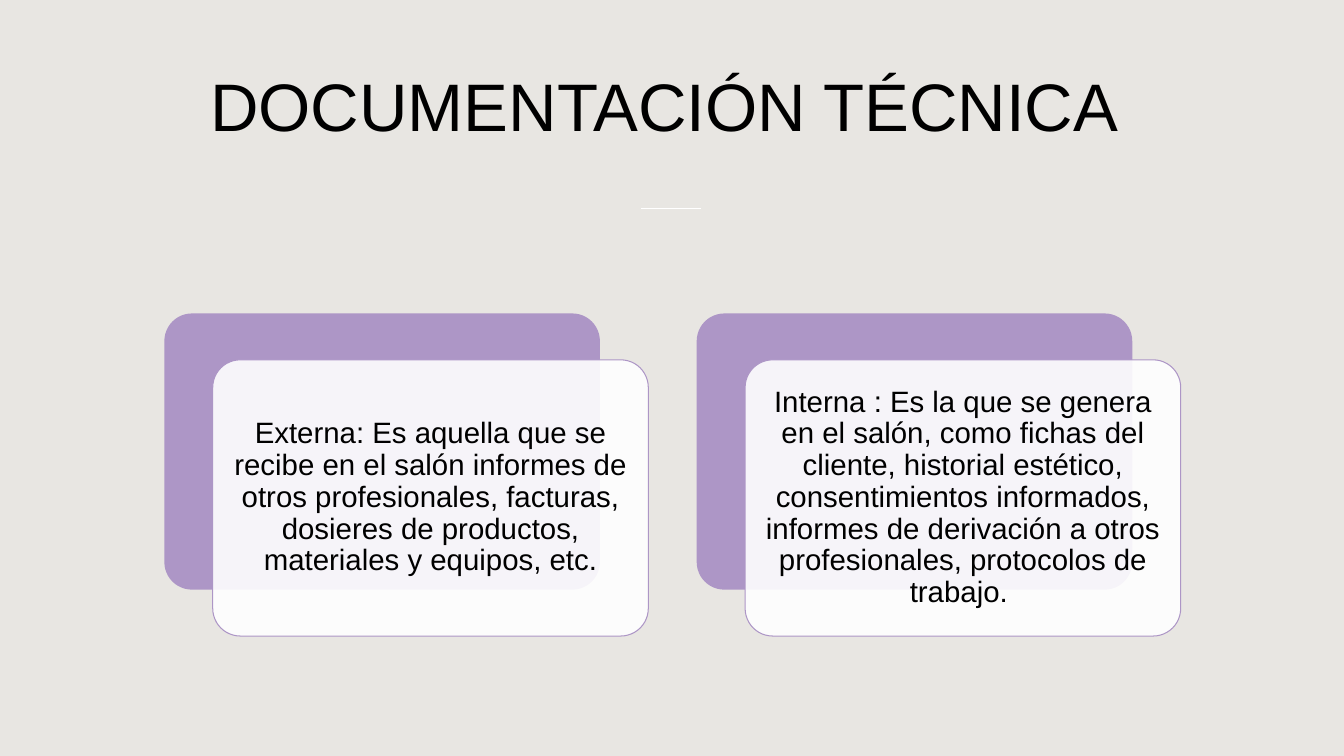
from pptx import Presentation
from pptx.dml.color import RGBColor
from pptx.enum.shapes import MSO_CONNECTOR as Connector, MSO_SHAPE as Shape
from pptx.enum.text import MSO_ANCHOR as Anchor, MSO_AUTO_SIZE as AutoSize, PP_ALIGN as Align
from pptx.oxml.ns import qn
from pptx.util import Inches, Pt
from lxml.etree import SubElement

BACKGROUND = RGBColor(0xE8, 0xE6, 0xE2)
PURPLE = RGBColor(0xAD, 0x96, 0xC6)
WHITE = RGBColor(0xFF, 0xFF, 0xFF)
BLACK = RGBColor(0, 0, 0)

CARD_WIDTH, CARD_HEIGHT = 4.32, 2.74
CARD_LEFT, CARD_TOP, CARD_STEP = 1.63, 3.11, 5.28
FRONT_SHIFT_X, FRONT_SHIFT_Y = 0.48, 0.46

DOCUMENT_TYPES = [
    "Externa: Es aquella que se recibe en el salón informes de otros profesionales, "
    "facturas, dosieres de productos, materiales y equipos, etc.",
    "Interna : Es la que se genera en el salón, como fichas del cliente, historial "
    "estético, consentimientos informados, informes de derivación a otros "
    "profesionales, protocolos de trabajo. ",
]


def write_text(shape, text, size):
    frame = shape.text_frame
    frame.word_wrap = True
    frame.auto_size = AutoSize.NONE
    frame.vertical_anchor = Anchor.MIDDLE
    paragraph = frame.paragraphs[0]
    paragraph.text = text
    paragraph.alignment = Align.CENTER
    paragraph.font.name = "Arial"
    paragraph.font.size = Pt(size)
    paragraph.font.color.rgb = BLACK
    return paragraph


def add_title(slide, text):
    title = slide.shapes.title
    title.left, title.top = Inches(1.08), Inches(0.28)
    title.width, title.height = Inches(11.17), Inches(1.52)
    write_text(title, text, 48)


def add_divider(slide):
    divider = slide.shapes.add_connector(
        Connector.STRAIGHT, Inches(6.36), Inches(2.07), Inches(6.95), Inches(2.07))
    divider.line.color.rgb = WHITE
    divider.line.width = Pt(1)
    SubElement(divider.line._get_or_add_ln().getparent(), qn("a:effectLst"))


def add_panel(slide, left, top, color):
    panel = slide.shapes.add_shape(
        Shape.ROUNDED_RECTANGLE, Inches(left), Inches(top),
        Inches(CARD_WIDTH), Inches(CARD_HEIGHT))
    panel.adjustments[0] = 0.1
    panel.shadow.inherit = False
    panel.fill.solid()
    panel.fill.fore_color.rgb = color
    return panel


def set_opacity(shape, percent):
    color = shape.fill._xPr.find(qn("a:solidFill"))[0]
    SubElement(color, qn("a:alpha"), val=str(percent * 1000))


def add_card(slide, left, text):
    back = add_panel(slide, left, CARD_TOP, PURPLE)
    back.line.fill.background()
    front = add_panel(slide, left + FRONT_SHIFT_X, CARD_TOP + FRONT_SHIFT_Y, WHITE)
    set_opacity(front, 90)
    front.line.color.rgb = PURPLE
    front.line.width = Pt(0.75)
    frame = front.text_frame
    frame.margin_left = frame.margin_right = Inches(0.09)
    frame.margin_top = frame.margin_bottom = Inches(0.09)
    paragraph = write_text(front, text, 21)
    paragraph.line_spacing = 0.9


def main():
    presentation = Presentation()
    presentation.slide_width, presentation.slide_height = Inches(13.33), Inches(7.5)
    slide = presentation.slides.add_slide(presentation.slide_layouts[5])
    slide.background.fill.solid()
    slide.background.fill.fore_color.rgb = BACKGROUND
    add_title(slide, "DOCUMENTACIÓN TÉCNICA ")
    add_divider(slide)
    for index, text in enumerate(DOCUMENT_TYPES):
        add_card(slide, CARD_LEFT + index * CARD_STEP, text)
    presentation.save("out.pptx")


if __name__ == "__main__":
    main()
